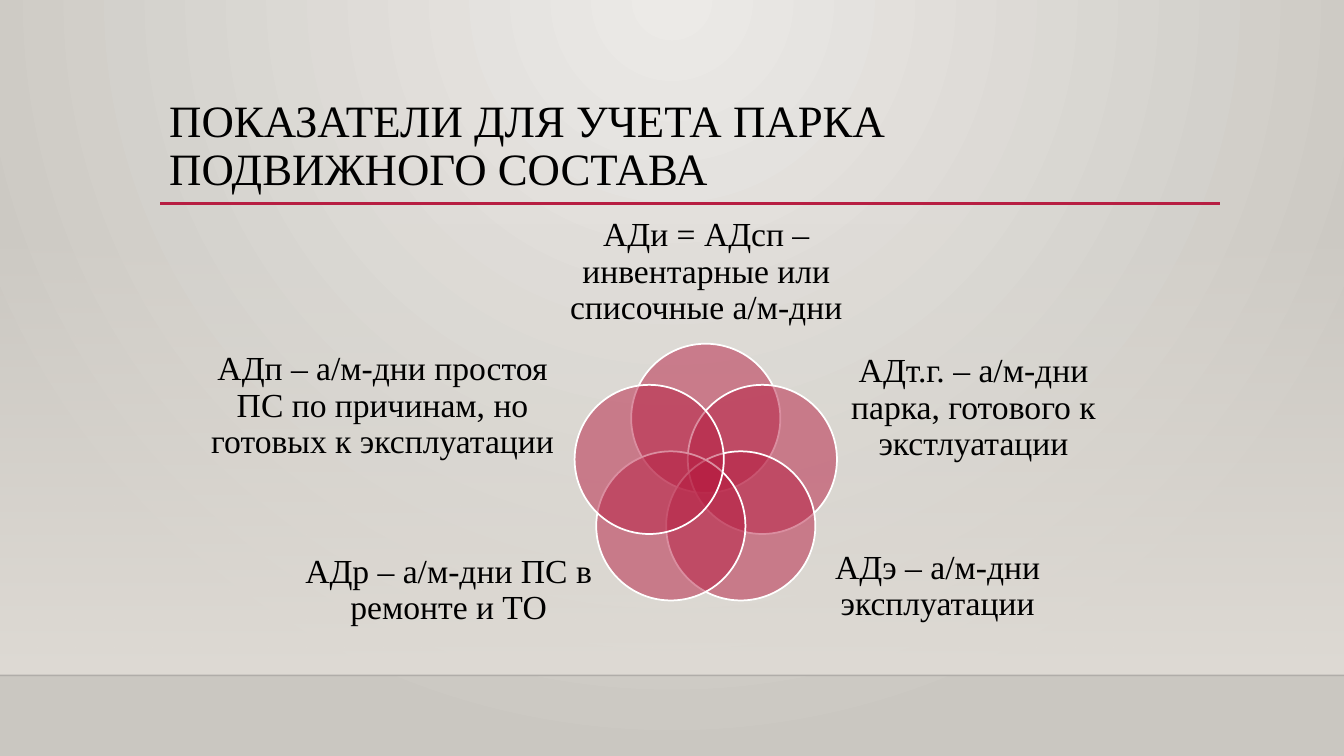
from math import cos, pi, sin

from lxml.etree import SubElement
from pptx import Presentation
from pptx.dml.color import RGBColor
from pptx.enum.shapes import MSO_CONNECTOR as CONNECTOR, MSO_SHAPE as SHAPE
from pptx.enum.text import MSO_ANCHOR as ANCHOR, PP_ALIGN as ALIGN
from pptx.oxml.ns import qn
from pptx.util import Inches, Pt

TITLE = "ПОКАЗАТЕЛИ ДЛЯ УЧЕТА ПАРКА ПОДВИЖНОГО СОСТАВА"
PETALS = [
    ("АДи = АДсп – инвентарные или списочные а/м-дни", (5.52, 2.2, 2.97, 1)),
    ("АДт.г. – а/м-дни парка, готового к экстлуатации", (8.2, 3.51, 2.91, 1.08)),
    ("АДэ – а/м-дни эксплуатации", (8.02, 5.28, 2.56, 1.08)),
    ("АДр – а/м-дни ПС в ремонте и ТО", (3.02, 5.32, 2.86, 1.08)),
    ("АДп – а/м-дни простоя ПС по причинам, но готовых к эксплуатации",
     (2.01, 3.49, 3.57, 1.08)),
]
FONT = "Times New Roman"
ACCENT, BLACK, WHITE, WALL = "B71E42", "000000", "FFFFFF", "DFDBD5"
WIDTH, HEIGHT, FLOOR_Y = 13.33, 7.5, 6.7
CENTER_X, CENTER_Y, RING, DIAMETER = 7, 4.74, 0.59, 1.48


def paint(color_format, color, alpha=None):
    color_format.rgb = RGBColor.from_string(color)
    if alpha is not None:
        node = color_format._xFill.find(qn("a:srgbClr"))
        SubElement(node, qn("a:alpha"), val=str(alpha * 1000))


def set_solid(fill, color, alpha=None):
    fill.solid()
    paint(fill.fore_color, color, alpha)


def set_gradient(fill, colors):
    fill.gradient()
    for stop, position, color in zip(fill.gradient_stops, (0, 1), colors):
        stop.position = position
        paint(stop.color, color)


def add_rule(slide, x1, x2, y, color, width, alpha=None):
    line = slide.shapes.add_connector(
        CONNECTOR.STRAIGHT, Inches(x1), Inches(y), Inches(x2), Inches(y))
    line.line.width = Pt(width)
    set_solid(line.line.fill, color, alpha)
    SubElement(line._element.spPr, qn("a:effectLst"))


def add_text(slide, box, text, size, align, inset_x=0, inset_y=0):
    tf = slide.shapes.add_textbox(*map(Inches, box)).text_frame
    tf.word_wrap = True
    tf.vertical_anchor = ANCHOR.MIDDLE
    tf.margin_left = tf.margin_right = Inches(inset_x)
    tf.margin_top = tf.margin_bottom = Inches(inset_y)
    p = tf.paragraphs[0]
    p.alignment = align
    p.line_spacing = 0.9
    r = p.add_run()
    r.text = text
    r.font.name = FONT
    r.font.size = Pt(size)
    paint(r.font.color, BLACK)


def add_background(slide):
    fill = slide.background.fill
    set_gradient(fill, ("ECEAE7", "CAC7C1"))
    grad = slide._element.find(".//" + qn("a:gradFill"))
    grad.remove(grad.find(qn("a:lin")))
    circle = SubElement(grad, qn("a:path"), path="circle")
    SubElement(circle, qn("a:fillToRect"), l="43000", t="0", r="43000", b="100000")

    wall = slide.shapes.add_shape(
        SHAPE.RECTANGLE, 0, Inches(2.21), Inches(WIDTH), Inches(FLOOR_Y - 2.21))
    wall.shadow.inherit = False
    wall.line.fill.background()
    set_gradient(wall.fill, (WALL, WALL))
    wall.fill.gradient_angle = 270
    first = wall._element.spPr.find(".//" + qn("a:srgbClr"))
    SubElement(first, qn("a:alpha"), val="0")
    add_rule(slide, 0, WIDTH, FLOOR_Y, "000001", 1, 20)


def add_petals(slide):
    for i, (text, box) in enumerate(PETALS):
        angle = 2 * pi * i / len(PETALS)
        left = CENTER_X + RING * sin(angle) - DIAMETER / 2
        top = CENTER_Y - RING * cos(angle) - DIAMETER / 2
        sp = slide.shapes.add_shape(
            SHAPE.OVAL, Inches(left), Inches(top), Inches(DIAMETER), Inches(DIAMETER))
        sp.shadow.inherit = False
        set_solid(sp.fill, ACCENT, 50)
        set_solid(sp.line.fill, WHITE)
        sp.line.width = Pt(1.25)
        add_text(slide, box, text, 24, ALIGN.CENTER)


def main():
    prs = Presentation()
    prs.slide_width, prs.slide_height = Inches(WIDTH), Inches(HEIGHT)
    slide = prs.slides.add_slide(prs.slide_layouts[6])
    add_background(slide)
    add_rule(slide, 1.59, 12.1, 2.02, ACCENT, 2.5)
    add_text(slide, (1.58, 0.88, 10.5, 1.16), TITLE, 32, ALIGN.LEFT, 0.1, 0.05)
    add_petals(slide)
    prs.save("out.pptx")


if __name__ == "__main__":
    main()
